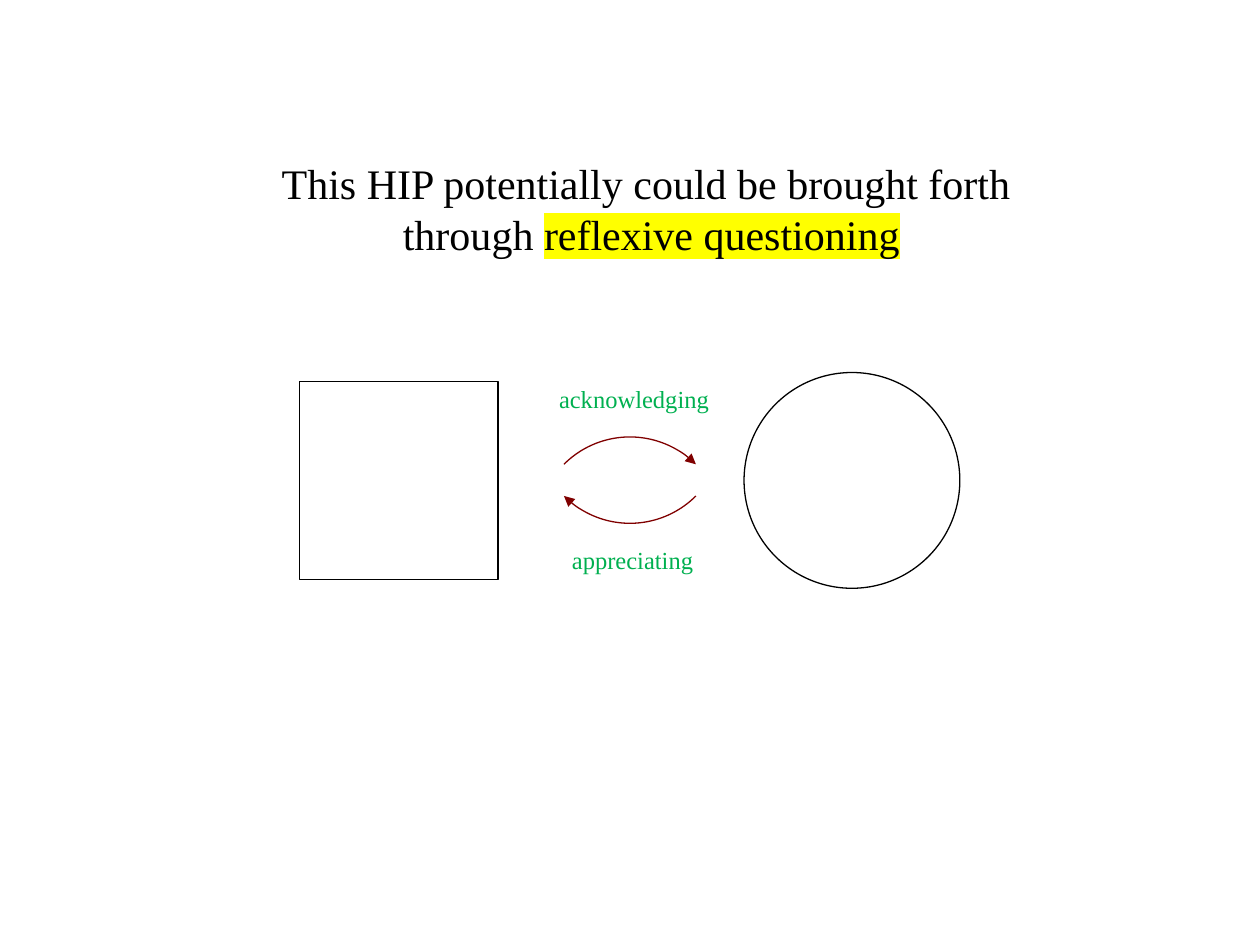
from dataclasses import dataclass

from lxml.etree import SubElement
from pptx import Presentation
from pptx.dml.color import RGBColor
from pptx.enum.shapes import MSO_SHAPE
from pptx.enum.text import MSO_ANCHOR, MSO_AUTO_SIZE, PP_ALIGN
from pptx.oxml import parse_xml
from pptx.oxml.ns import nsdecls, qn
from pptx.shapes.autoshape import Shape
from pptx.slide import Slide
from pptx.text.text import _Run as Run
from pptx.util import Cm, Pt

BLACK = RGBColor(0x00, 0x00, 0x00)
MAROON = RGBColor(0x80, 0x00, 0x00)
GREEN = RGBColor(0x00, 0xB0, 0x50)
FONT = "Times New Roman"
TEXT_FRAME = {
    "word_wrap": False,
    "auto_size": MSO_AUTO_SIZE.SHAPE_TO_FIT_TEXT,
    "vertical_anchor": MSO_ANCHOR.TOP,
}


@dataclass(frozen=True)
class Outline:
    """An unfilled shape; lengths in cm, angles in degrees clockwise."""
    kind: MSO_SHAPE
    left: float
    top: float
    size: float
    color: RGBColor = BLACK
    angles: tuple[float, ...] = ()


@dataclass(frozen=True)
class Label:
    text: str
    left: float
    top: float
    width: float


OUTLINES = (
    Outline(MSO_SHAPE.RECTANGLE, 6.04, 7.69, 4),
    Outline(MSO_SHAPE.OVAL, 15, 7.51, 4.35),
    Outline(MSO_SHAPE.ARC, 10.82, 8.81, 3.76, MAROON, (225, 315)),
    Outline(MSO_SHAPE.ARC, 10.82, 6.79, 3.76, MAROON, (45, 135)),
)
LABELS = (
    Label("acknowledging", 11.02, 7.62, 3.56),
    Label("appreciating", 11.28, 10.87, 2.97),
)
TITLE_LINES = (
    (("This HIP potentially could be brought forth ", False),),
    (("through ", False), ("reflexive questioning", True)),
)


def apply_format(target: object, values: dict) -> None:
    for name, value in values.items():
        setattr(target, name, value)


def format_run(run: Run, size: int, color: RGBColor) -> None:
    apply_format(run.font, {"name": FONT, "size": Pt(size)})
    run.font.color.rgb = color


def highlight(run: Run) -> None:
    """Mark the run in yellow; schema order puts the mark right after the fill."""
    fill = run.font._element.find(qn("a:solidFill"))
    fill.addnext(parse_xml(
        f'<a:highlight {nsdecls("a")}><a:srgbClr val="FFFF00"/></a:highlight>'))


def add_title(slide: Slide) -> None:
    title = slide.shapes.title
    apply_format(title, {"left": Cm(5.36), "top": Cm(3.05),
                         "width": Cm(15.54), "height": Cm(2.31)})
    frame = title.text_frame
    apply_format(frame, TEXT_FRAME)
    for index, line in enumerate(TITLE_LINES):
        paragraph = frame.add_paragraph() if index else frame.paragraphs[0]
        paragraph.alignment = PP_ALIGN.CENTER
        for text, marked in line:
            run = paragraph.add_run()
            run.text = text
            format_run(run, 24, BLACK)
            if marked:
                highlight(run)


def add_outline(slide: Slide, outline: Outline) -> Shape:
    shape = slide.shapes.add_shape(
        outline.kind, Cm(outline.left), Cm(outline.top),
        Cm(outline.size), Cm(outline.size))
    shape.shadow.inherit = False
    shape.fill.background()
    shape.line.color.rgb = outline.color
    shape.line.width = Pt(0.75)
    for index, angle in enumerate(outline.angles):
        # An angle is stored in 60000ths of a degree, an adjustment in 100000ths.
        shape.adjustments[index] = angle * 0.6
    if outline.angles:
        SubElement(shape.line._get_or_add_ln(), qn("a:tailEnd"), type="triangle")
    return shape


def add_label(slide: Slide, label: Label) -> None:
    box = slide.shapes.add_textbox(
        Cm(label.left), Cm(label.top), Cm(label.width), Cm(0.86))
    apply_format(box.text_frame, TEXT_FRAME)
    run = box.text_frame.paragraphs[0].add_run()
    run.text = label.text
    format_run(run, 14, GREEN)


def main() -> None:
    presentation = Presentation()
    apply_format(presentation, {"slide_width": Cm(25.4), "slide_height": Cm(19.05)})
    slide = presentation.slides.add_slide(
        presentation.slide_layouts.get_by_name("Title Only"))
    add_title(slide)
    for outline in OUTLINES:
        add_outline(slide, outline)
    for label in LABELS:
        add_label(slide, label)
    presentation.save("out.pptx")


if __name__ == "__main__":
    main()
